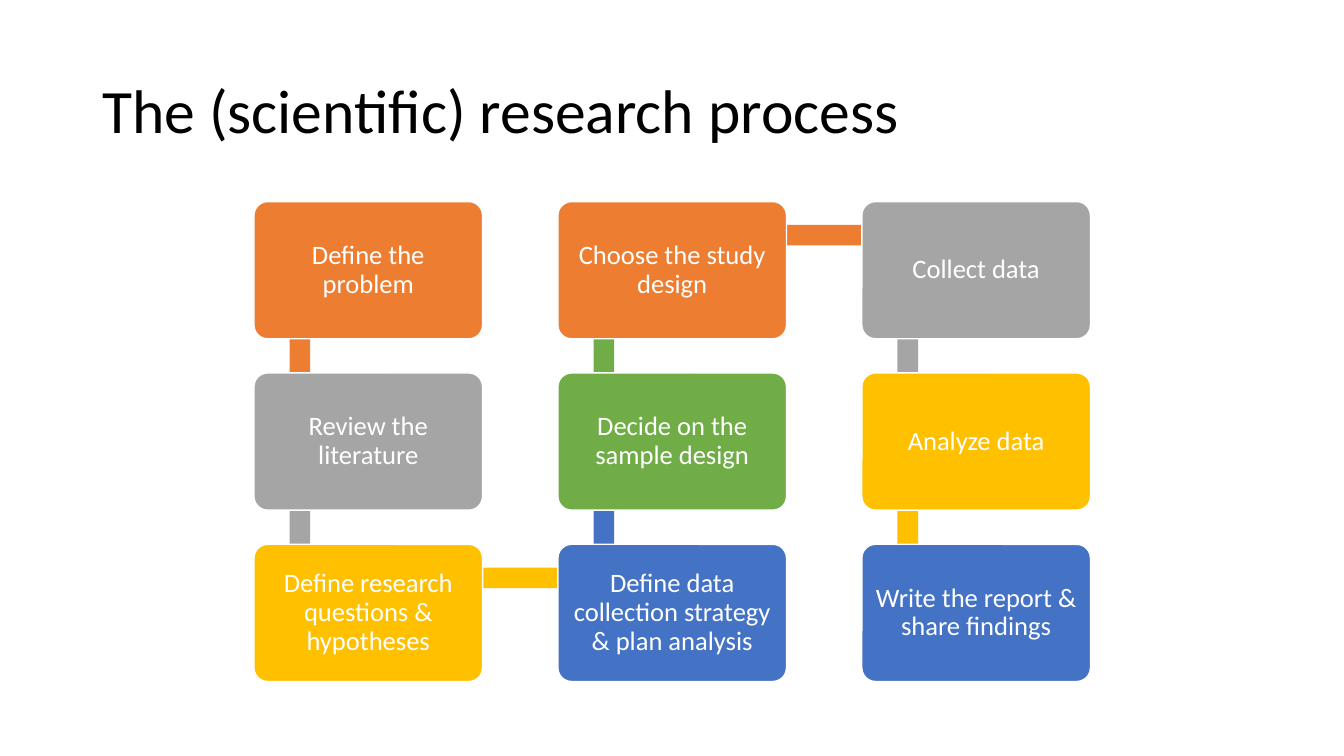
from pptx import Presentation
from pptx.dml.color import RGBColor
from pptx.enum.shapes import MSO_SHAPE
from pptx.enum.text import MSO_ANCHOR, PP_ALIGN
from pptx.util import Pt

BLACK = RGBColor(0x00, 0x00, 0x00)
WHITE = RGBColor(0xFF, 0xFF, 0xFF)
ORANGE = RGBColor(0xED, 0x7D, 0x31)
GRAY = RGBColor(0xA5, 0xA5, 0xA5)
GOLD = RGBColor(0xFF, 0xC0, 0x00)
BLUE = RGBColor(0x44, 0x72, 0xC4)
GREEN = RGBColor(0x70, 0xAD, 0x47)

GRID_LEFT, GRID_TOP = 181.4, 144
STEP_WIDTH, STEP_HEIGHT = 163.3, 98
COLUMN_PITCH, ROW_PITCH = 217.1, 122.4
LINK_X, LINK_Y, LINK_THICKNESS = 32.8, 24, 14.7

# Steps in reading order: text, colour, column, row
steps = [
    ("Define the problem", ORANGE, 0, 0),
    ("Review the literature", GRAY, 0, 1),
    ("Define research questions & hypotheses", GOLD, 0, 2),
    ("Define data collection strategy & plan analysis", BLUE, 1, 2),
    ("Decide on the sample design", GREEN, 1, 1),
    ("Choose the study design", ORANGE, 1, 0),
    ("Collect data", GRAY, 2, 0),
    ("Analyze data", GOLD, 2, 1),
    ("Write the report & share findings", BLUE, 2, 2),
]

presentation = Presentation()
presentation.slide_width = Pt(960)
presentation.slide_height = Pt(540)
slide = presentation.slides.add_slide(presentation.slide_layouts[6])


def add_filled(kind, left, top, width, height, color):
    shape = slide.shapes.add_shape(kind, Pt(left), Pt(top), Pt(width), Pt(height))
    shape.shadow.inherit = False
    shape.fill.solid()
    shape.fill.fore_color.rgb = color
    return shape


def write(frame, text, size, color):
    frame.word_wrap = True
    frame.vertical_anchor = MSO_ANCHOR.MIDDLE
    paragraph = frame.paragraphs[0]
    paragraph.text = text
    paragraph.line_spacing = 0.9
    paragraph.font.name = "Calibri"
    paragraph.font.size = Pt(size)
    paragraph.font.color.rgb = color
    return paragraph


# Title
title = slide.shapes.add_textbox(Pt(66), Pt(28.8), Pt(828), Pt(104.4))
write(title.text_frame, "The (scientific) research process", 44, BLACK)

for index, (text, color, column, row) in enumerate(steps):
    left = GRID_LEFT + column * COLUMN_PITCH
    top = GRID_TOP + row * ROW_PITCH

    # Link to the next step, partly covered by both boxes
    if index < len(steps) - 1:
        next_column, next_row = steps[index + 1][2:]
        link_left, link_top = left + LINK_X, top + LINK_Y
        if next_column > column:
            link_top -= LINK_THICKNESS / 2
            width, height = COLUMN_PITCH, LINK_THICKNESS
        else:
            link_left -= LINK_THICKNESS / 2
            link_top += min(next_row - row, 0) * ROW_PITCH
            width, height = LINK_THICKNESS, ROW_PITCH
        link = add_filled(MSO_SHAPE.RECTANGLE, link_left, link_top, width, height, color)
        link.line.fill.background()

    # Step box
    step = add_filled(MSO_SHAPE.ROUNDED_RECTANGLE, left, top, STEP_WIDTH, STEP_HEIGHT, color)
    step.adjustments[0] = 0.1
    step.line.color.rgb = WHITE
    step.line.width = Pt(1)
    frame = step.text_frame
    frame.margin_left = frame.margin_right = Pt(5.7)
    frame.margin_top = frame.margin_bottom = Pt(5.7)
    write(frame, text, 19, WHITE).alignment = PP_ALIGN.CENTER

presentation.save("out.pptx")
